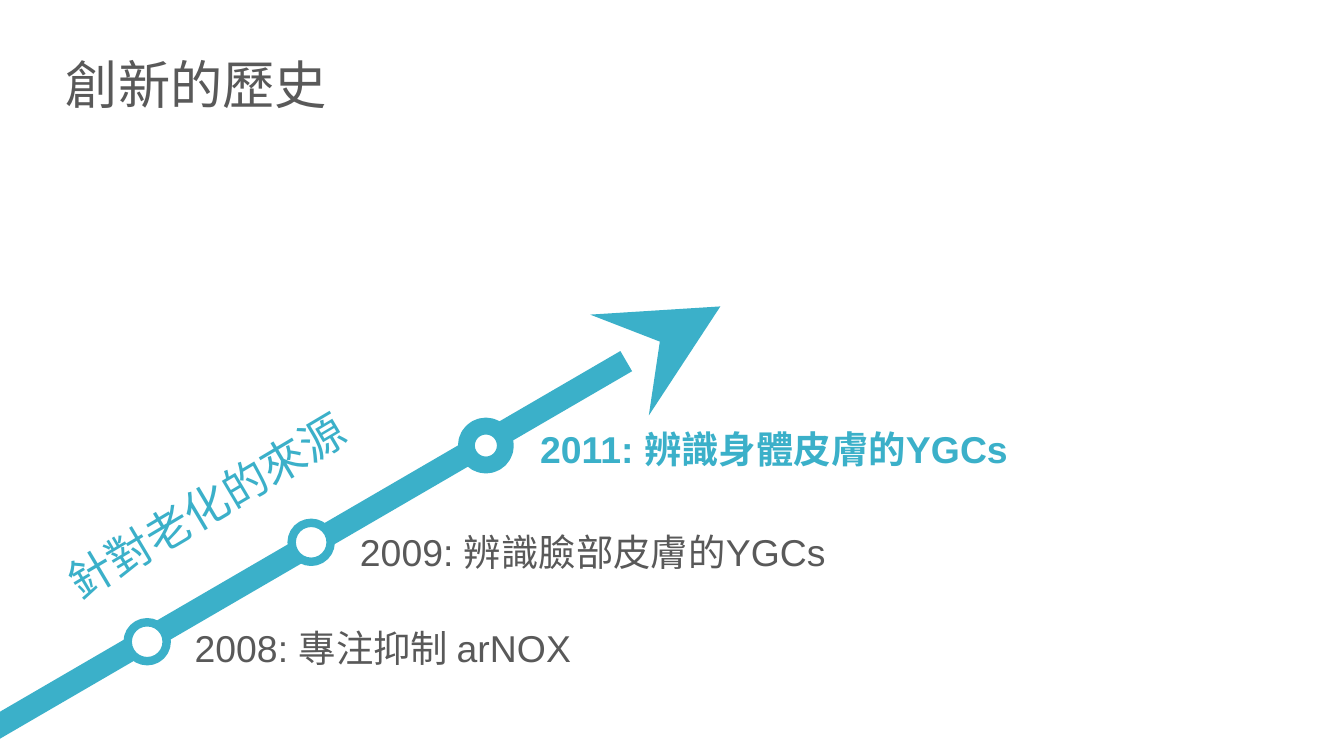
from pptx import Presentation
from pptx.dml.color import RGBColor
from pptx.enum.shapes import MSO_CONNECTOR, MSO_SHAPE
from pptx.enum.text import MSO_ANCHOR, PP_ALIGN
from pptx.oxml.ns import qn
from pptx.util import Inches, Pt
from lxml import etree

TEAL = RGBColor(0x3B, 0xB0, 0xC9)
GRAY = RGBColor(0x59, 0x59, 0x59)
WHITE = RGBColor(0xFF, 0xFF, 0xFF)
FONT = "Arial"
STRAIGHT = MSO_CONNECTOR.STRAIGHT
OVAL = MSO_SHAPE.OVAL
TOP, LEFT = MSO_ANCHOR.TOP, PP_ALIGN.LEFT
TITLE_ONLY = 5
DOT_SIZE = 0.29

TITLE = "創新的歷史"
THEME = "針對老化的來源"
ARROW = (-0.11, 5.46, 5.36, 2.28)
# Label, label box, dot corner, ring width, highlighted
MILESTONES = [
    ("2008: 專注抑制 arNOX", (1.35, 4.6, 3.11, 0.44), (0.95, 4.63), 4.5, False),
    ("2009: 辨識臉部皮膚的YGCs", (2.58, 3.89, 3.69, 0.44), (2.17, 3.89), 4.5, False),
    ("2011: 辨識身體皮膚的YGCs", (3.92, 3.12, 3.71, 0.44), (3.47, 3.17), 9, True),
]


def write(box, text, *, size, color=GRAY, bold=False, top_margin=0.05):
    frame = box.text_frame
    frame.word_wrap = True
    frame.vertical_anchor = TOP
    frame.margin_left = frame.margin_right = Inches(0.1)
    frame.margin_top, frame.margin_bottom = Inches(top_margin), Inches(0.05)
    para = frame.paragraphs[0]
    para.text = text
    para.alignment = LEFT
    for span in para.runs:
        span.font.name = FONT
        span.font.size = Pt(size)
        span.font.bold = bold
        span.font.color.rgb = color


def add_label(page, area, text, **text_format):
    box = page.shapes.add_textbox(*map(Inches, area))
    write(box, text, **text_format)
    return box


def add_arrow(page):
    arrow = page.shapes.add_connector(STRAIGHT, *map(Inches, ARROW))
    arrow.line.color.rgb = TEAL
    arrow.line.width = Pt(12.5)
    etree.SubElement(arrow.line._get_or_add_ln(), qn("a:tailEnd"),
                     type="stealth", w="lg", len="lg")
    etree.SubElement(arrow._element.spPr, qn("a:effectLst"))


def add_dot(page, corner, ring):
    dot = page.shapes.add_shape(OVAL, *map(Inches, (*corner, DOT_SIZE, DOT_SIZE)))
    dot.shadow.inherit = False
    dot.fill.solid()
    dot.fill.fore_color.rgb = WHITE
    dot.line.color.rgb = TEAL
    dot.line.width = Pt(ring)


def main():
    deck = Presentation()
    deck.slide_width = Inches(10)
    deck.slide_height = deck.slide_width * 9 // 16
    page = deck.slides.add_slide(deck.slide_layouts[TITLE_ONLY])

    title = page.shapes.title
    title.left, title.top, title.width, title.height = map(Inches, (0.39, 0.34, 5.84, 0.57))
    write(title, TITLE, size=28)

    add_arrow(page)
    for text, area, corner, ring, highlighted in MILESTONES:
        add_dot(page, corner, ring)
        add_label(page, area, text, size=20, bold=highlighted,
                  color=TEAL if highlighted else GRAY)

    theme = add_label(page, (-0.2, 1.74, 7.99, 0.97), THEME,
                      size=24, color=TEAL, top_margin=0.45)
    theme.rotation = 329.3

    deck.save("out.pptx")


if __name__ == "__main__":
    main()
